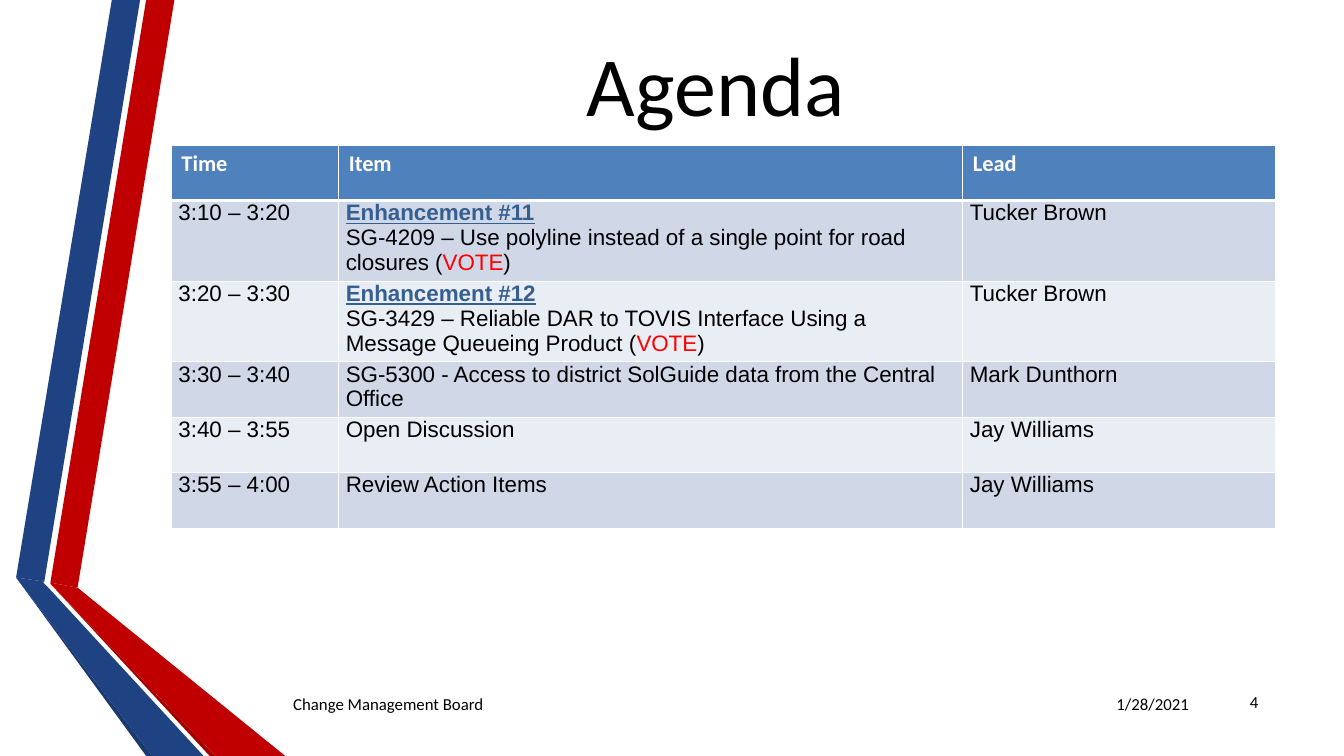
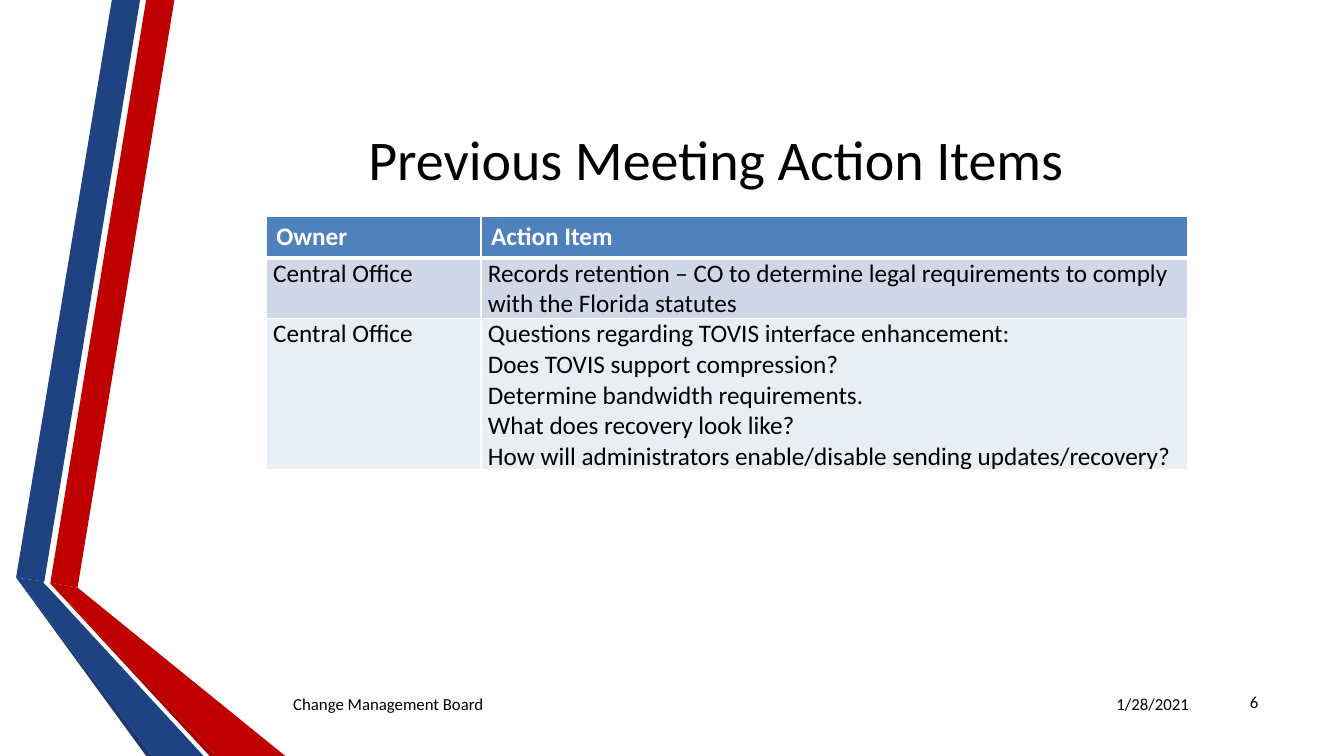
from lxml.etree import SubElement
from pptx import Presentation
from pptx.dml.color import RGBColor
from pptx.enum.text import MSO_ANCHOR as Anchor, PP_ALIGN as Align
from pptx.oxml.ns import qn
from pptx.util import Inches, Pt

BLACK = RGBColor(0x00, 0x00, 0x00)
WHITE = RGBColor(0xFF, 0xFF, 0xFF)
RED = RGBColor(0xC0, 0x00, 0x00)
DARK_RED = RGBColor(0xA4, 0x00, 0x00)
NAVY = RGBColor(0x1F, 0x42, 0x83)
DARK_NAVY = RGBColor(0x1B, 0x39, 0x6F)
HEADER_BLUE = RGBColor(0x4F, 0x81, 0xBD)
BANDS = (RGBColor(0xD0, 0xD8, 0xE8), RGBColor(0xE9, 0xED, 0xF4))
HEADING_BLUE = RGBColor(0x36, 0x5F, 0x91)
VOTE_RED = RGBColor(0xFF, 0x00, 0x00)

RIBBONS = (
    (RED, ((0.5, 5.78), (0.77, 5.83), (1.73, 0), (1.45, 0))),
    (NAVY, ((1.39, 0), (1.11, 0), (0.16, 5.73), (0.44, 5.77))),
    (DARK_NAVY, ((0.16, 5.73), (1.45, 7.5), (1.51, 7.5))),
    (DARK_RED, ((0.5, 5.79), (2.08, 7.5), (2.14, 7.5))),
    (RED, ((0.5, 5.79), (2.14, 7.5), (2.83, 7.5), (0.77, 5.83), (0.5, 5.78))),
    (NAVY, ((2.02, 7.5), (0.48, 5.83), (0.43, 5.78), (0.44, 5.77),
            (0.16, 5.73), (1.51, 7.5))),
)


class Deck:
    font_name = "Calibri"

    def __init__(self):
        self.presentation = Presentation()
        self.presentation.slide_width = Inches(13.33)
        self.presentation.slide_height = Inches(7.5)
        self.slide = None

    def add_slide(self, number):
        layout = self.presentation.slide_layouts[6]
        self.slide = self.presentation.slides.add_slide(layout)
        for color, points in RIBBONS:
            self.ribbon(color, points)
        self.text(str(number), 11.98, 6.76, 0.6, 0.4, 12, Align.RIGHT)
        self.text("1/28/2021", 10.64, 6.78, 1.25, 0.4, 12, Align.RIGHT)
        self.text("Change Management Board", 2.81, 6.78, 7.75, 0.4, 12, Align.LEFT)

    def ribbon(self, color, points):
        corners = [(Inches(x), Inches(y)) for x, y in points]
        builder = self.slide.shapes.build_freeform(*corners[0])
        builder.add_line_segments(corners[1:], close=True)
        shape = builder.convert_to_shape()
        shape.shadow.inherit = False
        shape.fill.solid()
        shape.fill.fore_color.rgb = color
        shape.line.fill.background()

    def text(self, words, left, top, width, height, size, align):
        shape = self.slide.shapes.add_textbox(
            Inches(left), Inches(top), Inches(width), Inches(height))
        frame = shape.text_frame
        frame.word_wrap = True
        frame.vertical_anchor = Anchor.MIDDLE
        paragraph = frame.paragraphs[0]
        paragraph.text = words
        paragraph.alignment = align
        self.style(paragraph.font, size, BLACK)

    def title(self, words, top, height, size):
        self.text(words, 1.62, top, 10.96, height, size, Align.CENTER)

    def style(self, font, size, color, name=None, bold=False):
        font.name = name or self.font_name
        font.size = Pt(size)
        font.bold = bold
        font.color.rgb = color

    def table(self, left, top, widths, heights, rows, size, body_font=None):
        frame = self.slide.shapes.add_table(
            len(rows), len(widths), Inches(left), Inches(top),
            Inches(sum(widths)), Inches(sum(heights)))
        table = frame.table
        for column, width in zip(table.columns, widths):
            column.width = Inches(width)
        for index, (row, height, contents) in enumerate(zip(table.rows, heights, rows)):
            row.height = Inches(height)
            for cell, content in zip(row.cells, contents):
                self.cell(cell, content, index, size, body_font)

    def cell(self, cell, content, row_index, size, body_font):
        is_header = row_index == 0
        self.borders(cell, row_index)
        cell.fill.solid()
        cell.fill.fore_color.rgb = HEADER_BLUE if is_header else BANDS[(row_index - 1) % 2]
        if not is_header:
            cell.margin_left = cell.margin_right = Inches(0.07)
            cell.margin_top = cell.margin_bottom = 0
        lines = [content] if isinstance(content, str) else content
        frame = cell.text_frame
        for index, line in enumerate(lines):
            paragraph = frame.add_paragraph() if index else frame.paragraphs[0]
            if is_header:
                self.style(paragraph.font, size, WHITE, bold=True)
            else:
                self.style(paragraph.font, size, BLACK, body_font)
            self.runs(paragraph, line)

    def runs(self, paragraph, line):
        for piece in [line] if isinstance(line, str) else line:
            words, color, is_heading = (piece, None, False) if isinstance(piece, str) else piece
            run = paragraph.add_run()
            run.text = words
            if color is not None:
                run.font.color.rgb = color
            if is_heading:
                run.font.bold = True
                run.font.underline = True

    def borders(self, cell, row_index):
        properties = cell._tc.get_or_add_tcPr()
        thick_side = {0: "B", 1: "T"}.get(row_index)
        for side in "LRTB":
            width = Pt(3 if side == thick_side else 1)
            line = SubElement(properties, qn(f"a:ln{side}"), w=str(width))
            fill = SubElement(line, qn("a:solidFill"))
            SubElement(fill, qn("a:srgbClr"), val=str(WHITE))


def enhancement(number, description):
    return [[(f"Enhancement #{number}", HEADING_BLUE, True)],
            [f"{description} (", ("VOTE", VOTE_RED, False), ")"]]


def main():
    deck = Deck()

    deck.add_slide(4)
    deck.title("Agenda", 0.26, 1.12, 60)
    agenda = [
        ("Time", "Item", "Lead"),
        ("3:10 – 3:20",
         enhancement(11, "SG-4209 – Use polyline instead of a single point for road closures"),
         "Tucker Brown"),
        ("3:20 – 3:30",
         enhancement(12, "SG-3429 – Reliable DAR to TOVIS Interface Using a Message "
                         "Queueing Product"),
         "Tucker Brown"),
        ("3:30 – 3:40",
         "SG-5300 - Access to district SolGuide data from the Central Office",
         "Mark Dunthorn"),
        ("3:40 – 3:55", "Open Discussion", "Jay Williams"),
        ("3:55 – 4:00", "Review Action Items", "Jay Williams"),
    ]
    deck.table(1.7, 1.44, (1.66, 6.19, 3.1), [0.55] * len(agenda), agenda, 16, "Arial")

    deck.add_slide(6)
    deck.title("Previous Meeting Action Items", 0.61, 1.92, 40)
    action_items = [
        ("Owner", "Action Item"),
        ("Central Office",
         "Records retention – CO to determine legal requirements to comply with the "
         "Florida statutes"),
        ("Central Office", [
            "Questions regarding TOVIS interface enhancement:",
            "Does TOVIS support compression?",
            "Determine bandwidth requirements.",
            "What does recovery look like?",
            "How will administrators enable/disable sending updates/recovery?",
        ]),
    ]
    deck.table(2.64, 2.15, (2.13, 7.01), (0.41, 0.41, 0.5), action_items, 18)

    deck.presentation.save("out.pptx")


if __name__ == "__main__":
    main()
